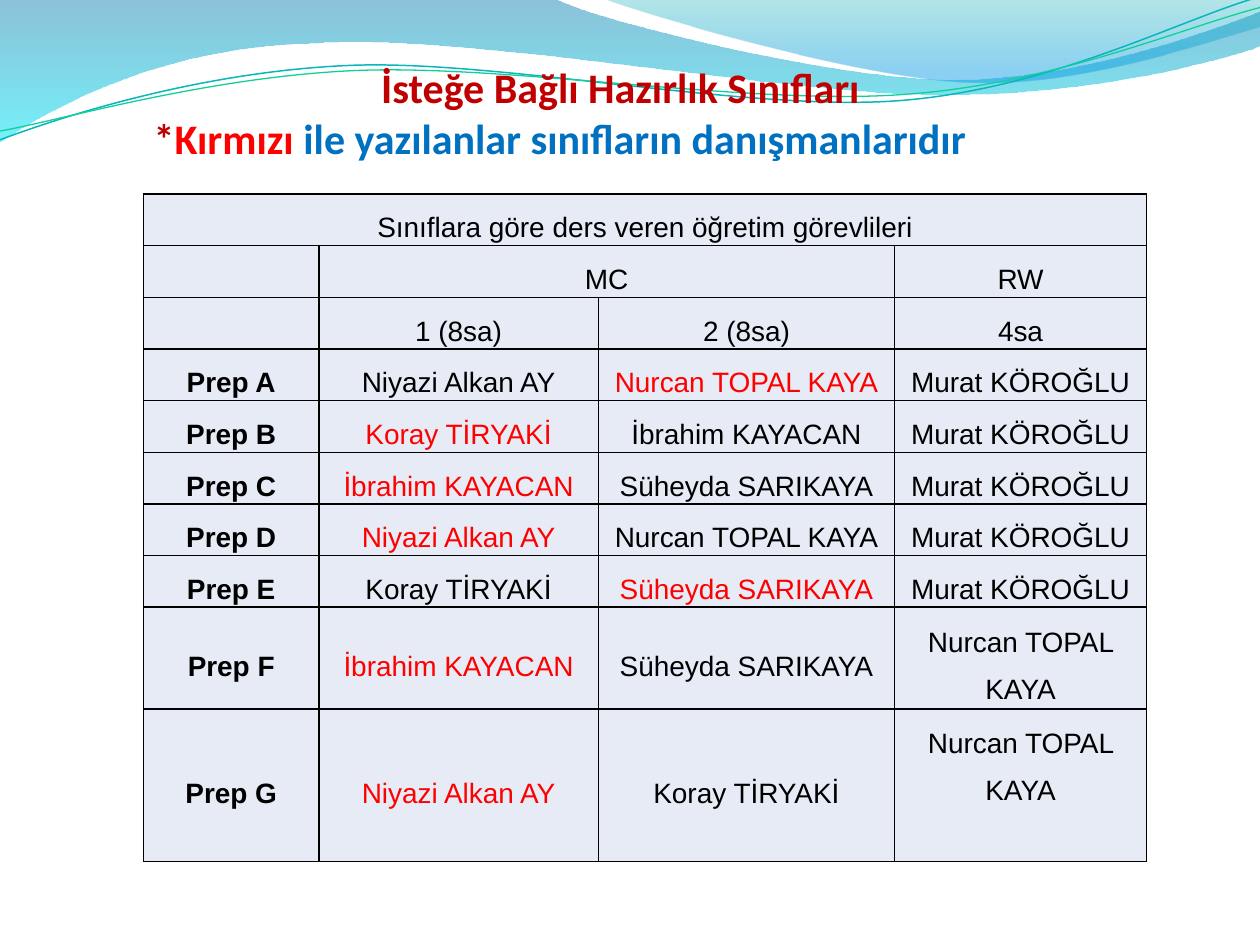
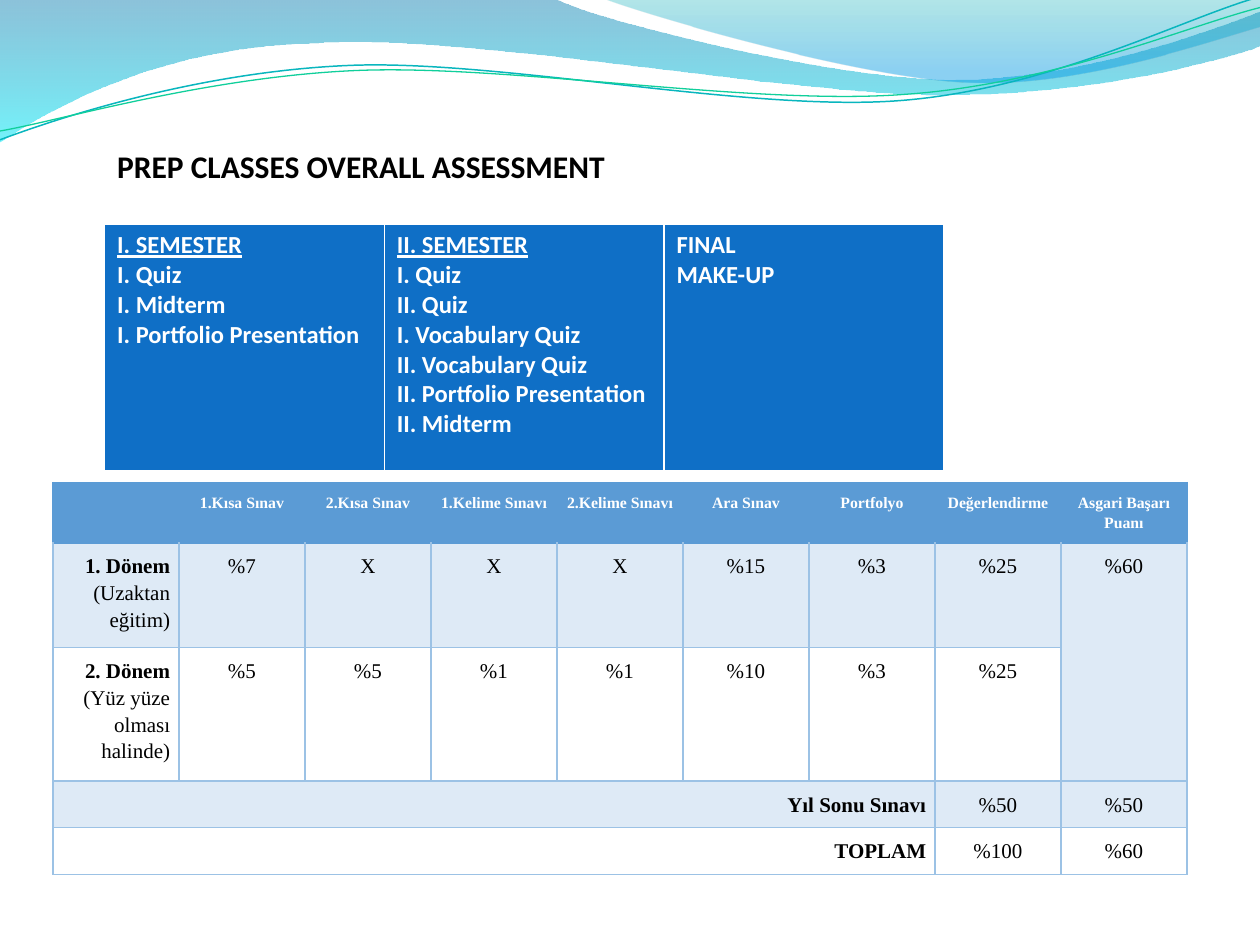
from lxml import etree
from pptx import Presentation
from pptx.dml.color import RGBColor
from pptx.enum.text import MSO_ANCHOR, MSO_AUTO_SIZE, PP_ALIGN
from pptx.oxml import parse_xml
from pptx.oxml.ns import nsdecls, qn
from pptx.util import Inches, Pt

BLACK, WHITE, RED = "000000", "FFFFFF", "FF0000"
DARK_RED, TITLE_BLUE = "C00000", "0070C0"
STAFF_FILL, SEMESTER_FILL = "E6EBF5", "0F6FC6"
HEADER_BLUE, GRID_BLUE, BAND_BLUE = "5B9BD5", "9CC2E5", "DEEAF6"
TITLE_ONLY = 5

# Each wave is a start point followed by steps of one point (line) or three (curve).
BROAD_WAVE = [
    (0, 0), [(4.4, -0.01)],
    [(4.76, 0.17), (6.64, 0.63), (7.58, 0.63)],
    [(8.53, 0.63), (9.58, 0.26), (10, 0.09)],
    [(10.01, 0.36)],
    [(9.83, 0.44), (8.7, 0.76), (7.46, 0.75)],
    [(6.22, 0.75), (3.82, 0.28), (2.57, 0.34)],
    [(1.29, 0.36), (0.46, 0.83), (-0.01, 1.13)],
]
RIGHT_WAVE = [
    (4.79, -0.01),
    [(5.09, 0.11), (6.82, 0.62), (7.69, 0.65)],
    [(8.56, 0.69), (9.61, 0.32), (10, 0.21)],
    [(10, 0)],
]
TEAL_STRAND = [
    (0, 1.11),
    [(0.48, 0.93), (1.58, 0.57), (2.77, 0.52)],
    [(3.95, 0.47), (5.93, 0.89), (7.13, 0.8)],
    [(8.33, 0.71), (9.38, 0.15), (9.98, -0.02)],
]
GREEN_STRAND = [
    (0, 1.04),
    [(0.47, 0.96), (1.64, 0.61), (2.83, 0.56)],
    [(4.03, 0.51), (5.97, 0.84), (7.17, 0.75)],
    [(8.36, 0.67), (9.41, 0.21), (10, 0.06)],
]

# Class, MC 1, MC 2, RW, and the column of the class adviser.
CLASSES = [
    ("Prep A", "Niyazi Alkan AY", "Nurcan TOPAL KAYA", "Murat KÖROĞLU", 2),
    ("Prep B", "Koray TİRYAKİ", "İbrahim KAYACAN", "Murat KÖROĞLU", 1),
    ("Prep C", "İbrahim KAYACAN", "Süheyda SARIKAYA", "Murat KÖROĞLU", 1),
    ("Prep D", "Niyazi Alkan AY", "Nurcan TOPAL KAYA", "Murat KÖROĞLU", 1),
    ("Prep E", "Koray TİRYAKİ", "Süheyda SARIKAYA", "Murat KÖROĞLU", 2),
    ("Prep F", "İbrahim KAYACAN", "Süheyda SARIKAYA", "Nurcan TOPAL KAYA", 1),
    ("Prep G", "Niyazi Alkan AY", "Koray TİRYAKİ", "Nurcan TOPAL KAYA", 1),
]
STAFF_HEADINGS = [
    ("Sınıflara göre ders veren öğretim görevlileri", "", "", ""),
    ("", "MC", "", "RW"),
    ("", "1 (8sa)", "2 (8sa)", "4sa"),
]
SEMESTERS = [
    ["I. SEMESTER", "I. Quiz", "I. Midterm", "I. Portfolio Presentation"],
    ["II. SEMESTER", "I. Quiz", "II. Quiz", "I. Vocabulary Quiz",
     "II. Vocabulary Quiz", "II. Portfolio Presentation", "II. Midterm"],
    ["FINAL", "MAKE-UP"],
]
WEIGHTS = [
    ["", "1.Kısa Sınav", "2.Kısa Sınav", "1.Kelime Sınavı", "2.Kelime Sınavı",
     "Ara Sınav", "Portfolyo", "Değerlendirme", "Asgari Başarı Puanı"],
    ["1. Dönem\n(Uzaktan eğitim)", "%7", "X", "X", "X", "%15", "%3", "%25", "%60"],
    ["2. Dönem\n(Yüz yüze olması halinde)", "%5", "%5", "%1", "%1", "%10", "%3", "%25", ""],
    ["Yıl Sonu Sınavı", "", "", "", "", "", "", "%50", "%50"],
    ["TOPLAM", "", "", "", "", "", "", "%100", "%60"],
]


def rgb(color):
    return RGBColor.from_string(color)


def add_freeform(slide, wave, close):
    """Build the outline from all its points, then turn each triple into a curve."""
    start, *steps = wave
    builder = slide.shapes.build_freeform(Inches(start[0]), Inches(start[1]))
    builder.add_line_segments(
        [(Inches(x), Inches(y)) for step in steps for x, y in step], close=close)
    shape = builder.convert_to_shape()
    shape.shadow.inherit = False
    lines = iter(list(shape.element.iter(qn("a:lnTo"))))
    for step in steps:
        first, *others = [next(lines) for _ in step]
        if others:
            curve = etree.Element(qn("a:cubicBezTo"))
            first.addprevious(curve)
            for line in (first, *others):
                curve.append(line[0])
                line.getparent().remove(line)
    return shape


def add_gradient_wave(slide, wave, stops):
    """Add a filled wave; stops are (position %, colour, opacity %)."""
    shape = add_freeform(slide, wave, close=True)
    shape.line.fill.background()
    stop_xml = "".join(
        f'<a:gs pos="{position * 1000}"><a:srgbClr val="{color}">'
        f'<a:alpha val="{opacity * 1000}"/></a:srgbClr></a:gs>'
        for position, color, opacity in stops)
    properties = shape.element.spPr
    properties.find(qn("a:custGeom")).addnext(parse_xml(
        f'<a:gradFill {nsdecls("a")} rotWithShape="1"><a:gsLst>{stop_xml}</a:gsLst>'
        '<a:lin ang="5400000" scaled="0"/></a:gradFill>'))
    return shape


def add_strand(slide, wave, color, width):
    shape = add_freeform(slide, wave, close=False)
    shape.fill.background()
    shape.line.color.rgb = rgb(color)
    shape.line.width = Pt(width)
    return shape


def add_master_waves(presentation, slide):
    """Draw the waves and move them to the master, behind its placeholders."""
    waves = [
        add_gradient_wave(slide, BROAD_WAVE, [(0, "0079AD", 45), (100, "00E9F7", 55)]),
        add_gradient_wave(slide, RIGHT_WAVE, [(0, "00ABB4", 30), (80, "0099E4", 45),
                                              (100, "0099E4", 45)]),
        add_strand(slide, TEAL_STRAND, "09B6BE", 0.85),
        add_strand(slide, GREEN_STRAND, "10CF9B", 0.75),
    ]
    for position, wave in enumerate(waves, start=2):
        presentation.slide_master.shapes.element.insert(position, wave.element)


def style_paragraph(paragraph, font, size, color, bold=False,
                    align=PP_ALIGN.LEFT, spacing=None):
    paragraph.alignment = align
    paragraph.line_spacing = spacing
    paragraph.font.name = font
    paragraph.font.size = Pt(size)
    paragraph.font.bold = bold
    paragraph.font.color.rgb = rgb(color)


def place_title(slide, left, top, width, height):
    title = slide.shapes.title
    title.left, title.top = Inches(left), Inches(top)
    title.width, title.height = Inches(width), Inches(height)
    frame = title.text_frame
    frame.word_wrap = True
    frame.auto_size = MSO_AUTO_SIZE.NONE
    frame.vertical_anchor = MSO_ANCHOR.TOP
    return frame


def add_table(slide, left, top, widths, heights):
    frame = slide.shapes.add_table(len(heights), len(widths), Inches(left), Inches(top),
                                   Inches(sum(widths)), Inches(sum(heights)))
    table = frame.table
    table.first_row = table.horz_banding = False
    for column, width in zip(table.columns, widths):
        column.width = Inches(width)
    for row, height in zip(table.rows, heights):
        row.height = Inches(height)
    return table


def set_borders(cell, color, **special):
    """Give all sides a 1 pt line; special maps L, R, T or B to (colour, width)."""
    properties = cell._tc.get_or_add_tcPr()
    for position, side in enumerate("LRTB"):
        line_color, width = special.get(side, (color, 1))
        line = etree.Element(qn(f"a:ln{side}"), w=str(Pt(width)))
        fill = etree.SubElement(line, qn("a:solidFill"))
        etree.SubElement(fill, qn("a:srgbClr"), val=line_color)
        properties.insert(position, line)


def fill_cell(cell, text, fill, margins, anchor=MSO_ANCHOR.TOP):
    """Set text, fill, anchor and margins (left, top, right, bottom)."""
    cell.text = text
    cell.fill.solid()
    cell.fill.fore_color.rgb = rgb(fill)
    cell.vertical_anchor = anchor
    (cell.margin_left, cell.margin_top,
     cell.margin_right, cell.margin_bottom) = map(Inches, margins)
    return cell.text_frame.paragraphs


def add_staff_title(slide):
    frame = place_title(slide, 0.62, 0.44, 8.11, 1.31)
    heading, legend = frame.paragraphs[0], frame.add_paragraph()
    heading.text = "İsteğe Bağlı Hazırlık Sınıfları"
    style_paragraph(heading, "Calibri", 24, DARK_RED, True, PP_ALIGN.CENTER)
    style_paragraph(legend, "Calibri", 24, DARK_RED, True)
    for text, color in (("*", DARK_RED), ("Kırmızı", RED),
                        (" ile yazılanlar sınıfların danışmanlarıdır", TITLE_BLUE)):
        run = legend.add_run()
        run.text = text
        run.font.color.rgb = rgb(color)
    for paragraph in (heading, legend):
        properties = paragraph._p.get_or_add_pPr()
        properties.set("marL", str(Inches(0.5)))
        properties.set("indent", "0")


def add_staff_table(slide):
    heights = [0.41] * 8 + [0.81, 1.21]
    table = add_table(slide, 1.14, 1.54, [1.39, 2.22, 2.35, 2], heights)
    rows = [(*heading, None) for heading in STAFF_HEADINGS] + CLASSES
    for row, (*texts, adviser) in enumerate(rows):
        for column, text in enumerate(texts):
            cell = table.cell(row, column)
            is_last = row == len(rows) - 1 and column == 3
            anchor = MSO_ANCHOR.TOP if is_last else MSO_ANCHOR.MIDDLE
            margins = (0.01, 0.03 if is_last else 0.01, 0.01, 0)
            paragraph, = fill_cell(cell, text, STAFF_FILL, margins, anchor)
            style_paragraph(paragraph, "Arial", 16, RED if column == adviser else BLACK,
                            bold=adviser is not None and column == 0,
                            align=PP_ALIGN.CENTER, spacing=1.5)
            set_borders(cell, BLACK)
    table.cell(0, 0).merge(table.cell(0, 3))
    table.cell(1, 1).merge(table.cell(1, 2))


def add_semester_table(slide):
    table = add_table(slide, 0.83, 1.78, [2.22] * 3, [1.97])
    for column, lines in enumerate(SEMESTERS):
        cell = table.cell(0, column)
        paragraphs = fill_cell(cell, "\n".join(lines), SEMESTER_FILL, (0.1, 0.05, 0.1, 0.05))
        for paragraph in paragraphs:
            style_paragraph(paragraph, "Calibri", 14, WHITE, bold=True)
        paragraphs[0].font.underline = lines[0].endswith("SEMESTER")
        set_borders(cell, WHITE, B=(WHITE, 3))


def add_weight_table(slide):
    table = add_table(slide, 0.42, 3.83, [1] * 9, [0.48, 0.83, 1.06, 0.37, 0.37])
    for row, texts in enumerate(WEIGHTS):
        is_header = row == 0
        fill = HEADER_BLUE if is_header else BAND_BLUE if row % 2 else WHITE
        for column, text in enumerate(texts):
            cell = table.cell(row, column)
            is_label = column == 0
            paragraphs = fill_cell(cell, text, fill, [0.07] * 4)
            for index, paragraph in enumerate(paragraphs):
                style_paragraph(paragraph, "Times New Roman", 9 if is_header else 12,
                                WHITE if is_header else BLACK,
                                bold=is_header or (is_label and index == 0),
                                align=PP_ALIGN.RIGHT if is_label else PP_ALIGN.CENTER,
                                spacing=1.15)
            top = {"T": (HEADER_BLUE, 1)} if row == 1 else {}
            set_borders(cell, HEADER_BLUE if is_header else GRID_BLUE, **top)
    table.cell(1, 8).merge(table.cell(2, 8))
    for row in (3, 4):
        table.cell(row, 0).merge(table.cell(row, 6))


def main():
    presentation = Presentation()
    presentation.slide_width, presentation.slide_height = Inches(10), Inches(7.5)
    layout = presentation.slide_layouts[TITLE_ONLY]

    staff_slide = presentation.slides.add_slide(layout)
    add_master_waves(presentation, staff_slide)
    add_staff_title(staff_slide)
    add_staff_table(staff_slide)

    assessment_slide = presentation.slides.add_slide(layout)
    title = place_title(assessment_slide, 0.83, 1.12, 8.19, 1.31)
    title.text = "PREP CLASSES OVERALL ASSESSMENT"
    style_paragraph(title.paragraphs[0], "Calibri", 18, BLACK, bold=True)
    add_semester_table(assessment_slide)
    add_weight_table(assessment_slide)

    presentation.save("out.pptx")


if __name__ == "__main__":
    main()
